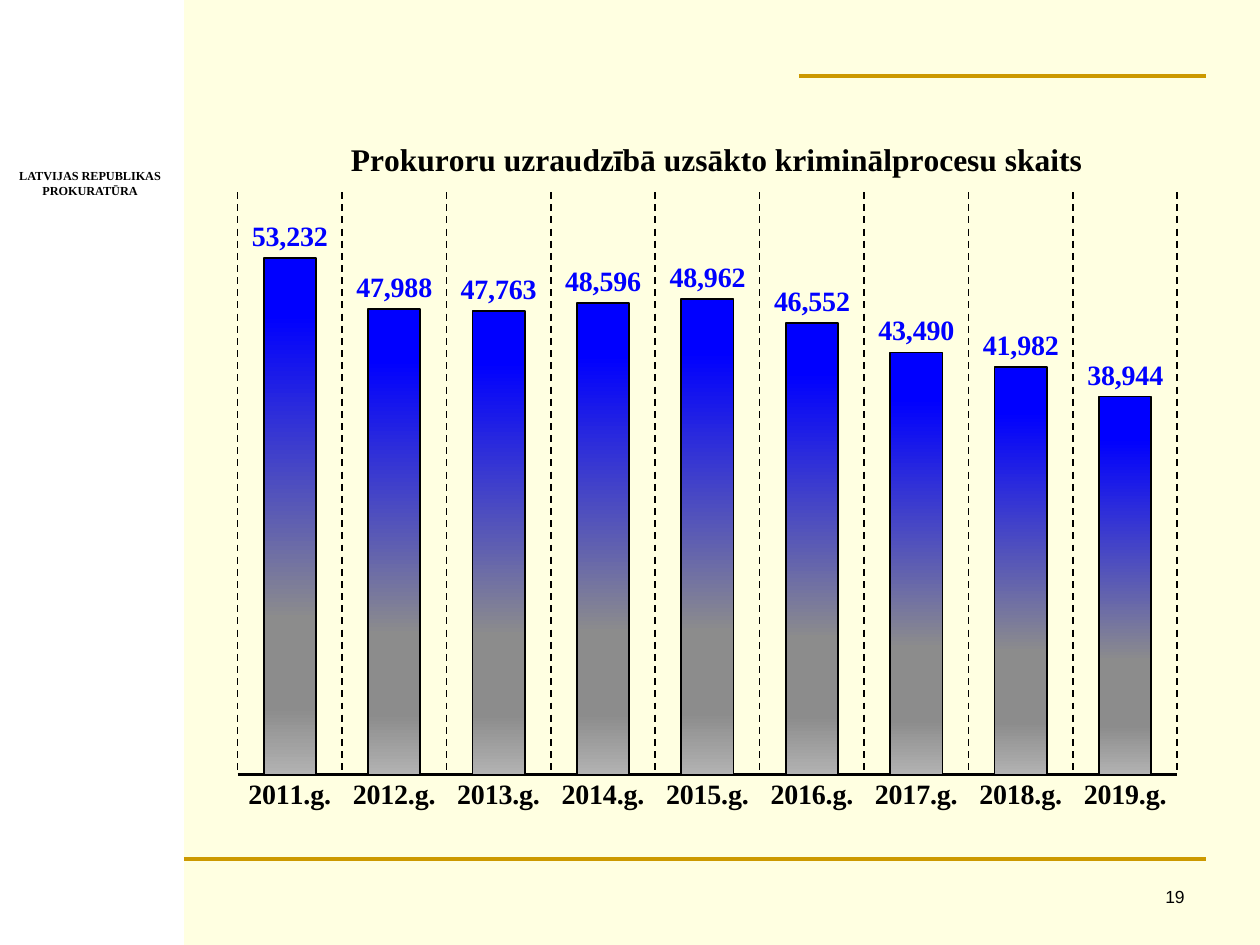
from lxml import etree
from pptx import Presentation, util as u
from pptx.chart.data import CategoryChartData
from pptx.dml.color import RGBColor
from pptx.enum import chart as ch, dml, shapes, text
from pptx.oxml import parse_xml
from pptx.oxml.ns import nsdecls, qn

HEX = {"page": "FFFFE1", "side": "FFFFFF", "rule": "CC9900",
       "ink": "000000", "blue": "0000FF", "grey": "8C8C8C", "pale": "B2B2B2"}
SERIF = "Times New Roman"
WIDE, HIGH = 10, 7.5
SIDE = 1.46
HEAD = "Prokuroru uzraudzībā uzsākto kriminālprocesu skaits"
CASES = [53232, 47988, 47763, 48596, 48962, 46552, 43490, 41982, 38944]


def rgb(name):
    return RGBColor.from_string(HEX[name])


def style(font, size, color="ink", bold=True, face=SERIF):
    font.size, font.bold, font.name = u.Pt(size), bold, face
    font.color.rgb = rgb(color)


def stroke(line, color, width):
    line.color.rgb = rgb(color)
    line.width = u.Pt(width)


def write(slide, lines, box, align, wrap=True, **form):
    frame = slide.shapes.add_textbox(*map(u.Inches, box)).text_frame
    frame.word_wrap = wrap
    frame.text = "\n".join(lines)
    for para in frame.paragraphs:
        para.alignment = align
        style(para.runs[0].font, **form)


def rule(slide, left, right, top):
    line = slide.shapes.add_connector(
        shapes.MSO_CONNECTOR.STRAIGHT, *map(u.Inches, (left, top, right, top)))
    stroke(line.line, "rule", 2.25)
    etree.SubElement(line._element.spPr, qn("a:effectLst"))


def place(node, index, **share):
    """Fix a chart part at shares of the chart's size."""
    for old in node.findall(qn("c:layout")):
        node.remove(old)
    inner = '<c:layoutTarget val="inner"/>' if "w" in share else ""
    modes = "".join(f'<c:{key}Mode val="edge"/>' for key in share if key in "xy")
    sizes = "".join(f'<c:{key} val="{val}"/>' for key, val in share.items())
    node.insert(index, parse_xml(
        f'<c:layout {nsdecls("c")}><c:manualLayout>{inner}{modes}{sizes}'
        '</c:manualLayout></c:layout>'))


def shade(bars, stops):
    """Fill the bars from top to bottom with (percent, colour) stops."""
    marks = "".join(f'<a:gs pos="{pos * 1000}"><a:srgbClr val="{HEX[name]}"/></a:gs>'
                    for pos, name in stops)
    bars.format._element.get_or_add_spPr().insert(0, parse_xml(
        f'<a:gradFill {nsdecls("a")}><a:gsLst>{marks}</a:gsLst>'
        '<a:lin ang="5400000" scaled="0"/></a:gradFill>'))


def sidebar(slide, box):
    left, top, wide, high = box
    panel = slide.shapes.add_shape(shapes.MSO_SHAPE.RECTANGLE, *map(u.Inches, box))
    panel.shadow.inherit = False
    panel.fill.solid()
    panel.fill.fore_color.rgb = rgb("side")
    panel.line.fill.background()
    write(slide, ["LATVIJAS REPUBLIKAS", "PROKURATŪRA"],
          (left + 0.05, top + 1.29, wide - 0.13, 0.33),
          text.PP_ALIGN.CENTER, wrap=False, size=7)


def frame(slide, left, right):
    rule(slide, left, right, 6.82)
    rule(slide, 6.34, right, 0.6)
    write(slide, ["19"], (7.42, 6.98, 2.08, 0.35), text.PP_ALIGN.RIGHT,
          size=10, bold=False, face="Arial")


def graph(slide, box):
    data = CategoryChartData(number_format="#,##0")
    data.categories = [f"{year}.g." for year in range(2011, 2020)]
    data.add_series(HEAD, CASES)
    chart = slide.shapes.add_chart(
        ch.XL_CHART_TYPE.COLUMN_CLUSTERED, *map(u.Inches, box), data).chart
    style(chart.font, 16)
    chart.has_legend = False

    chart.has_title = True
    title = chart.chart_title
    title.text_frame.text = HEAD
    style(title.text_frame.paragraphs[0].runs[0].font, 18)
    place(title._element, 1, x=0.13, y=0.04)
    place(chart._chartSpace.chart.plotArea, 0, x=0.02, y=0.12, w=0.96, h=0.81)

    years = chart.category_axis
    years.major_tick_mark = ch.XL_TICK_MARK.NONE
    style(years.tick_labels.font, 16)
    stroke(years.format.line, "ink", 1.5)
    years.has_major_gridlines = True
    grid = years.major_gridlines.format.line
    stroke(grid, "ink", 1)
    grid.dash_style = dml.MSO_LINE.DASH

    scale = chart.value_axis
    scale.minimum_scale, scale.maximum_scale = 0, 60000
    scale.has_major_gridlines = False
    scale.visible = False

    plot = chart.plots[0]
    plot.gap_width, plot.overlap = 100, -27
    plot.vary_by_categories = False
    bars = plot.series[0]
    bars.invert_if_negative = False
    stroke(bars.format.line, "ink", 1)
    shade(bars, [(11, "blue"), (70, "grey"), (87, "grey"), (100, "pale")])
    tags = bars.data_labels
    tags.show_value = True
    tags.number_format, tags.number_format_is_linked = "#,##0", False
    tags.position = ch.XL_LABEL_POSITION.OUTSIDE_END
    style(tags.font, 16, "blue")


def main():
    deck = Presentation()
    deck.slide_width, deck.slide_height = u.Inches(WIDE), u.Inches(HIGH)
    slide = deck.slides.add_slide(deck.slide_layouts[6])
    back = slide.background.fill
    back.solid()
    back.fore_color.rgb = rgb("page")
    sidebar(slide, (0, 0, SIDE, HIGH))
    frame(slide, SIDE, 9.57)
    graph(slide, (1.73, 0.84, 7.77, 5.71))
    deck.save("out.pptx")


if __name__ == "__main__":
    main()
